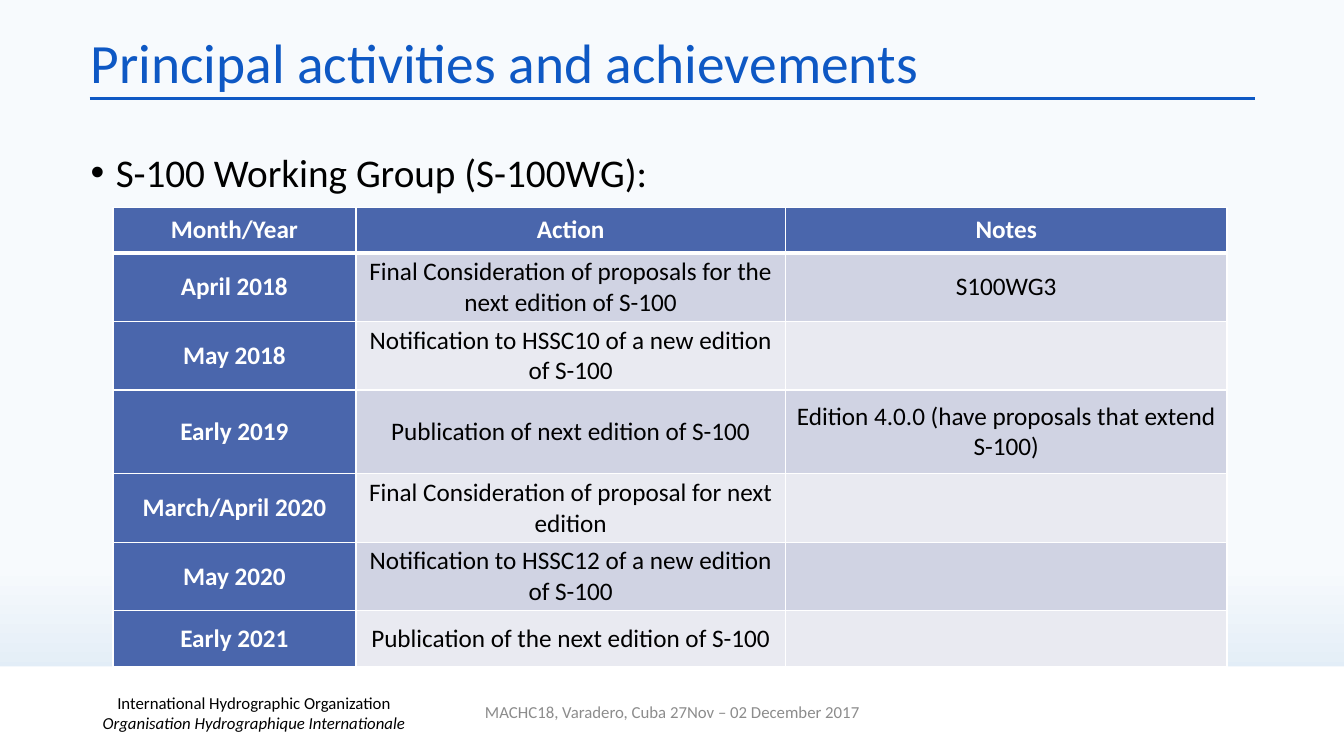
from lxml.etree import SubElement
from pptx import Presentation
from pptx.dml.color import RGBColor
from pptx.enum.shapes import MSO_CONNECTOR, MSO_SHAPE
from pptx.enum.text import MSO_ANCHOR, PP_ALIGN
from pptx.oxml.ns import qn
from pptx.util import Pt

EMU_PER_PX = 9144  # 100 px to the inch
FONT = "Calibri"
BLACK, WHITE, GREY = "000000", "FFFFFF", "8C8C8C"
TITLE_BLUE, TABLE_BLUE = "0E58C4", "4A66AC"
BANDS = ["D0D3E3", "E9EAF1"]

COLUMN_WIDTHS = [241, 426, 438]
ROW_HEIGHTS = [45, 68, 68, 83, 68, 68, 55]
WORK_PLAN = [
    ["Month/Year", "Action", "Notes"],
    ["April 2018", "Final Consideration of proposals for the next edition of S-100", "S100WG3"],
    ["May 2018", "Notification to HSSC10 of a new edition of S-100", ""],
    ["Early 2019", "Publication of next edition of S-100",
     "Edition 4.0.0 (have proposals that extend S-100)"],
    ["March/April 2020", "Final Consideration of proposal for next edition", ""],
    ["May 2020", "Notification to HSSC12 of a new edition of S-100", ""],
    ["Early 2021", "Publication of the next edition of S-100", ""],
]


def px(length):
    return int(length * EMU_PER_PX)


def color(hex_value):
    return RGBColor.from_string(hex_value)


class SlideBuilder:
    def __init__(self, presentation):
        self.slide = presentation.slides.add_slide(presentation.slide_layouts[6])
        self.shapes = self.slide.shapes

    def background(self, stops):
        """Fill the slide from top to bottom; stops are (position, colour) pairs."""
        fill = self.slide.background.fill
        fill.gradient()
        fill.gradient_angle = 270
        for stop, (position, hex_value) in zip(fill.gradient_stops, stops):
            stop.position = position
            stop.color.rgb = color(hex_value)

    def rule(self, left, top, right, hex_value, width):
        line = self.shapes.add_connector(
            MSO_CONNECTOR.STRAIGHT, px(left), px(top), px(right), px(top))
        line.line.color.rgb = color(hex_value)
        line.line.width = Pt(width)
        SubElement(line._element.spPr, qn("a:effectLst"))

    def band(self, left, top, width, height, hex_value):
        band = self.shapes.add_shape(
            MSO_SHAPE.RECTANGLE, px(left), px(top), px(width), px(height))
        band.shadow.inherit = False
        band.fill.solid()
        band.fill.fore_color.rgb = color(hex_value)
        band.line.fill.background()

    def style(self, paragraph, size, hex_value, align, bold=False):
        paragraph.alignment = align
        font = paragraph.font
        font.name, font.size, font.bold = FONT, Pt(size), bold
        font.color.rgb = color(hex_value)

    def text(self, box, wording, size, hex_value, align=PP_ALIGN.LEFT,
             anchor=MSO_ANCHOR.MIDDLE, line_spacing=1.0, bullet_indent=0):
        """Add a one-paragraph text box and return its paragraph."""
        frame = self.shapes.add_textbox(*map(px, box)).text_frame
        frame.word_wrap = True
        frame.vertical_anchor = anchor
        paragraph = frame.paragraphs[0]
        paragraph.add_run().text = wording
        paragraph.line_spacing = line_spacing
        if bullet_indent:
            properties = paragraph._p.get_or_add_pPr()
            properties.set("marL", str(px(bullet_indent)))
            properties.set("indent", str(-px(bullet_indent)))
            SubElement(properties, qn("a:buFont"), typeface="Arial")
            SubElement(properties, qn("a:buChar"), char="•")
        self.style(paragraph, size, hex_value, align)
        return paragraph

    def cell_borders(self, cell, hex_value, bottom_width):
        properties = cell._tc.get_or_add_tcPr()
        for side, width in zip("LRTB", [1, 1, 1, bottom_width]):
            line = SubElement(properties, qn(f"a:ln{side}"), w=str(Pt(width)))
            fill = SubElement(line, qn("a:solidFill"))
            SubElement(fill, qn("a:srgbClr"), val=hex_value)

    def table(self, left, top, widths, heights, rows):
        """Add a table with a dark header row and first column, and banded rows."""
        table = self.shapes.add_table(
            len(rows), len(widths), px(left), px(top),
            px(sum(widths)), px(sum(heights))).table
        for column, width in zip(table.columns, widths):
            column.width = px(width)
        for r, (values, height) in enumerate(zip(rows, heights)):
            table.rows[r].height = px(height)
            for c, value in enumerate(values):
                heading = r == 0 or c == 0
                cell = table.cell(r, c)
                cell.text = value
                cell.vertical_anchor = MSO_ANCHOR.MIDDLE
                cell.margin_left = cell.margin_right = px(7)
                cell.margin_top = cell.margin_bottom = 0
                self.cell_borders(cell, WHITE, 3 if r == 0 else 1)
                cell.fill.solid()
                cell.fill.fore_color.rgb = color(TABLE_BLUE if heading else BANDS[(r - 1) % 2])
                self.style(cell.text_frame.paragraphs[0], 18, WHITE if heading else BLACK,
                           PP_ALIGN.CENTER, bold=heading)


def main():
    presentation = Presentation()
    presentation.slide_width, presentation.slide_height = px(1333), px(750)
    page = SlideBuilder(presentation)

    page.background([(0.75, "F7FAFD"), (1.0, "D0E2F1")])
    page.rule(89, 98, 1245, TITLE_BLUE, 2.25)
    page.band(0, 661, 1333, 89, WHITE)

    organization = page.text((27, 687, 450, 40), "International Hydrographic Organization",
                             12, BLACK, PP_ALIGN.CENTER)
    organization.add_line_break()
    french_name = organization.add_run()
    french_name.text = "Organisation Hydrographique Internationale"
    french_name.font.italic = True

    page.text((80, 30, 982, 70), "Principal activities and achievements",
              39.6, TITLE_BLUE, line_spacing=0.9)
    page.text((80, 147, 1164, 495), "S-100 Working Group (S-100WG):", 28, BLACK,
              PP_ALIGN.JUSTIFY, MSO_ANCHOR.TOP, line_spacing=0.9, bullet_indent=25)
    page.text((442, 686, 450, 40), "MACHC18, Varadero, Cuba 27Nov – 02 December 2017",
              12, GREY, PP_ALIGN.CENTER)
    page.table(112, 206, COLUMN_WIDTHS, ROW_HEIGHTS, WORK_PLAN)

    presentation.save("out.pptx")


if __name__ == "__main__":
    main()
